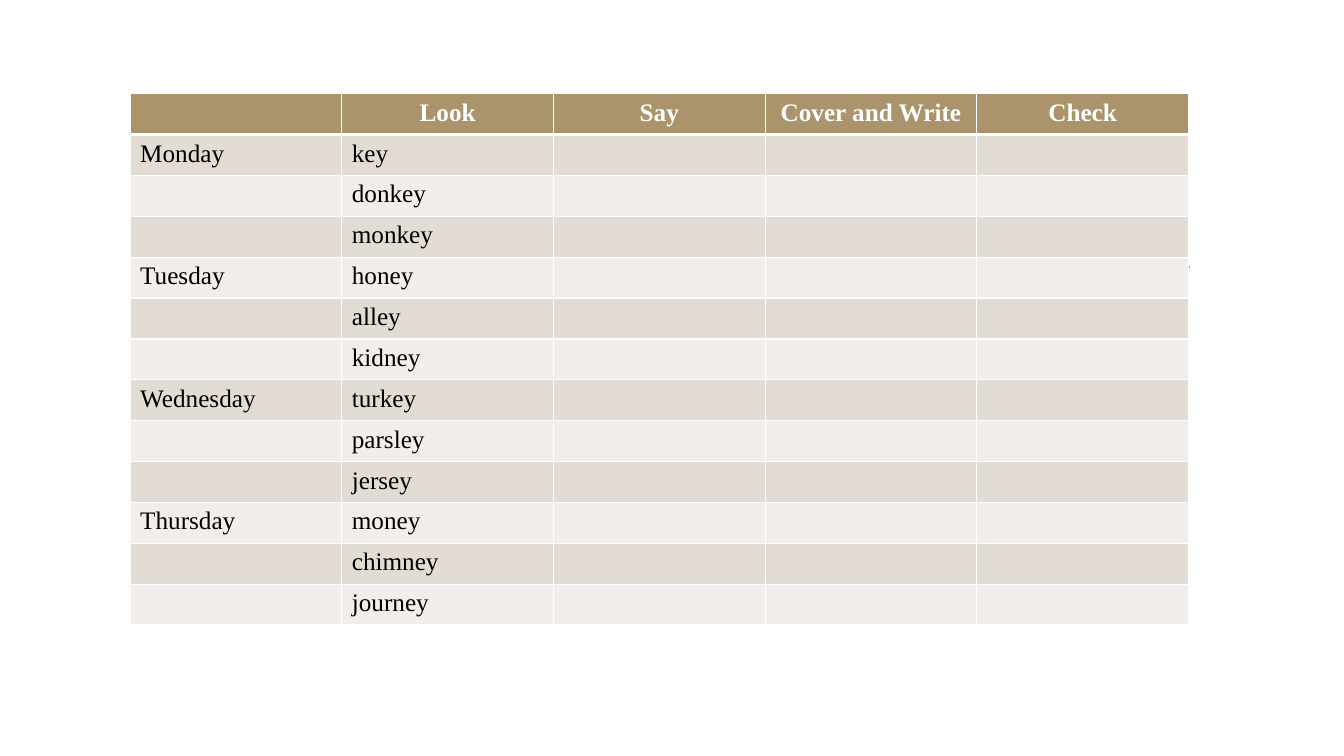
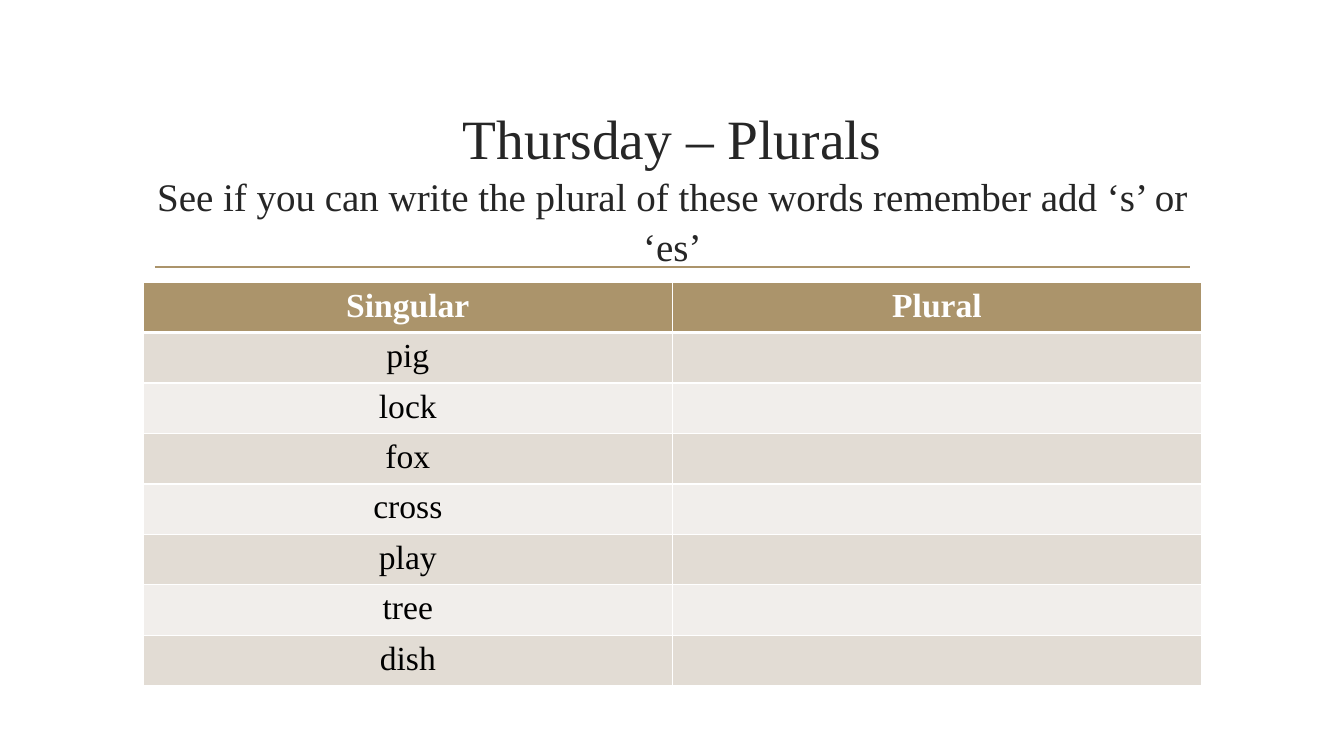
from dataclasses import dataclass

from lxml import etree
from pptx import Presentation
from pptx.dml.color import RGBColor
from pptx.enum.shapes import MSO_CONNECTOR
from pptx.enum.text import MSO_ANCHOR, PP_ALIGN
from pptx.oxml.ns import qn
from pptx.util import Cm, Pt

LEFT, CENTER = PP_ALIGN.LEFT, PP_ALIGN.CENTER
MIDDLE = MSO_ANCHOR.MIDDLE
STRAIGHT = MSO_CONNECTOR.STRAIGHT
BLANK_LAYOUT = 6

DAYS = {
    "Monday": ("key", "donkey", "monkey"),
    "Tuesday": ("honey", "alley", "kidney"),
    "Wednesday": ("turkey", "parsley", "jersey"),
    "Thursday": ("money", "chimney", "journey"),
}
SINGULARS = ("pig", "lock", "fox", "cross", "play", "tree", "dish")


@dataclass(frozen=True)
class Theme:
    """Colours, typeface and type sizes shared by the pages."""

    font: str = "Times New Roman"
    accent: str = "AB946B"
    bands: tuple = ("E2DCD4", "F1EEEB")
    white: str = "FFFFFF"
    title: str = "262626"
    body: str = "000000"
    title_size: float = 39.6
    subtitle_size: float = 27.9
    word_size: float = 18
    plural_size: float = 24
    rule_width: float = 1.25
    border: float = 1
    header_border: float = 3


class Worksheet:
    """Draws spelling pages in one style."""

    def __init__(self, theme):
        """Start an empty widescreen deck."""
        self.theme = theme
        self.deck = Presentation()
        self.deck.slide_width, self.deck.slide_height = Cm(33.87), Cm(19.05)
        self.page = None

    def new_page(self):
        """Add a page with the shared rule."""
        layout = self.deck.slide_layouts[BLANK_LAYOUT]
        self.page = self.deck.slides.add_slide(layout)
        rule = self.page.shapes.add_connector(STRAIGHT, Cm(3.9), Cm(6.73), Cm(30), Cm(6.73))
        rule.line.color.rgb = RGBColor.from_string(self.theme.accent)
        rule.line.width = Pt(self.theme.rule_width)
        etree.SubElement(rule.element.spPr, qn("a:effectLst"))

    def style(self, span, size, color, bold=False):
        """Apply type settings to a run."""
        settings = {"name": self.theme.font, "size": Pt(size), "bold": bold}
        for name, value in settings.items():
            setattr(span.font, name, value)
        span.font.color.rgb = RGBColor.from_string(color)

    def title(self, heading, instruction):
        """Write a centred heading with an instruction below it."""
        box = self.page.shapes.add_textbox(Cm(3.61), Cm(2.84), Cm(26.67), Cm(3.63))
        frame = box.text_frame
        settings = {"word_wrap": True, "vertical_anchor": MIDDLE,
                    "margin_left": Cm(0.2), "margin_right": Cm(0.2)}
        for name, value in settings.items():
            setattr(frame, name, value)
        para = frame.paragraphs[0]
        para.alignment, para.line_spacing = CENTER, 1.05
        for text, size in ((heading, self.theme.title_size),
                           (instruction, self.theme.subtitle_size)):
            if para.runs:
                para.add_line_break()
            span = para.add_run()
            span.text = text
            self.style(span, size, self.theme.title)

    def borders(self, cell, top, bottom):
        """Draw white borders around a cell."""
        properties = cell._tc.get_or_add_tcPr()
        side = self.theme.border
        for tag, width in (("lnL", side), ("lnR", side), ("lnT", top), ("lnB", bottom)):
            line = etree.SubElement(properties, qn(f"a:{tag}"), w=str(Pt(width)))
            fill = etree.SubElement(line, qn("a:solidFill"))
            etree.SubElement(fill, qn("a:srgbClr"), val=self.theme.white)

    def table(self, left, top, row_height, rows, size, body_align):
        """Draw a banded table whose first row is the header."""
        theme = self.theme
        width, height = Cm(26.67), Cm(row_height * len(rows))
        table = self.page.shapes.add_table(
            len(rows), len(rows[0]), Cm(left), Cm(top), width, height).table
        for row_index, row in enumerate(rows):
            header = row_index == 0
            table.rows[row_index].height = Cm(row_height)
            fill = theme.accent if header else theme.bands[(row_index - 1) % 2]
            above = theme.header_border if row_index == 1 else theme.border
            below = theme.header_border if header else theme.border
            for column_index, text in enumerate(row):
                cell = table.cell(row_index, column_index)
                self.borders(cell, above, below)
                cell.fill.solid()
                cell.fill.fore_color.rgb = RGBColor.from_string(fill)
                if text:
                    para = cell.text_frame.paragraphs[0]
                    para.alignment = CENTER if header else body_align
                    span = para.add_run()
                    span.text = text
                    self.style(span, size, theme.white if header else theme.body, header)


def main():
    """Build and save both pages."""
    theme = Theme()
    sheet = Worksheet(theme)

    sheet.new_page()
    practice = [("", "Look", "Say", "Cover and Write", "Check")]
    for day, words in DAYS.items():
        for index, word in enumerate(words):
            practice.append(("" if index else day, word, "", "", ""))
    sheet.table(3.28, 2.36, 1.03, practice, theme.word_size, LEFT)

    sheet.new_page()
    sheet.title("Thursday – Plurals",
                "See if you can write the plural of these words remember add ‘s’ or ‘es’")
    plurals = [("Singular", "Plural")] + [(word, "") for word in SINGULARS]
    sheet.table(3.61, 7.11, 1.18, plurals, theme.plural_size, CENTER)

    sheet.deck.save("out.pptx")


if __name__ == "__main__":
    main()
